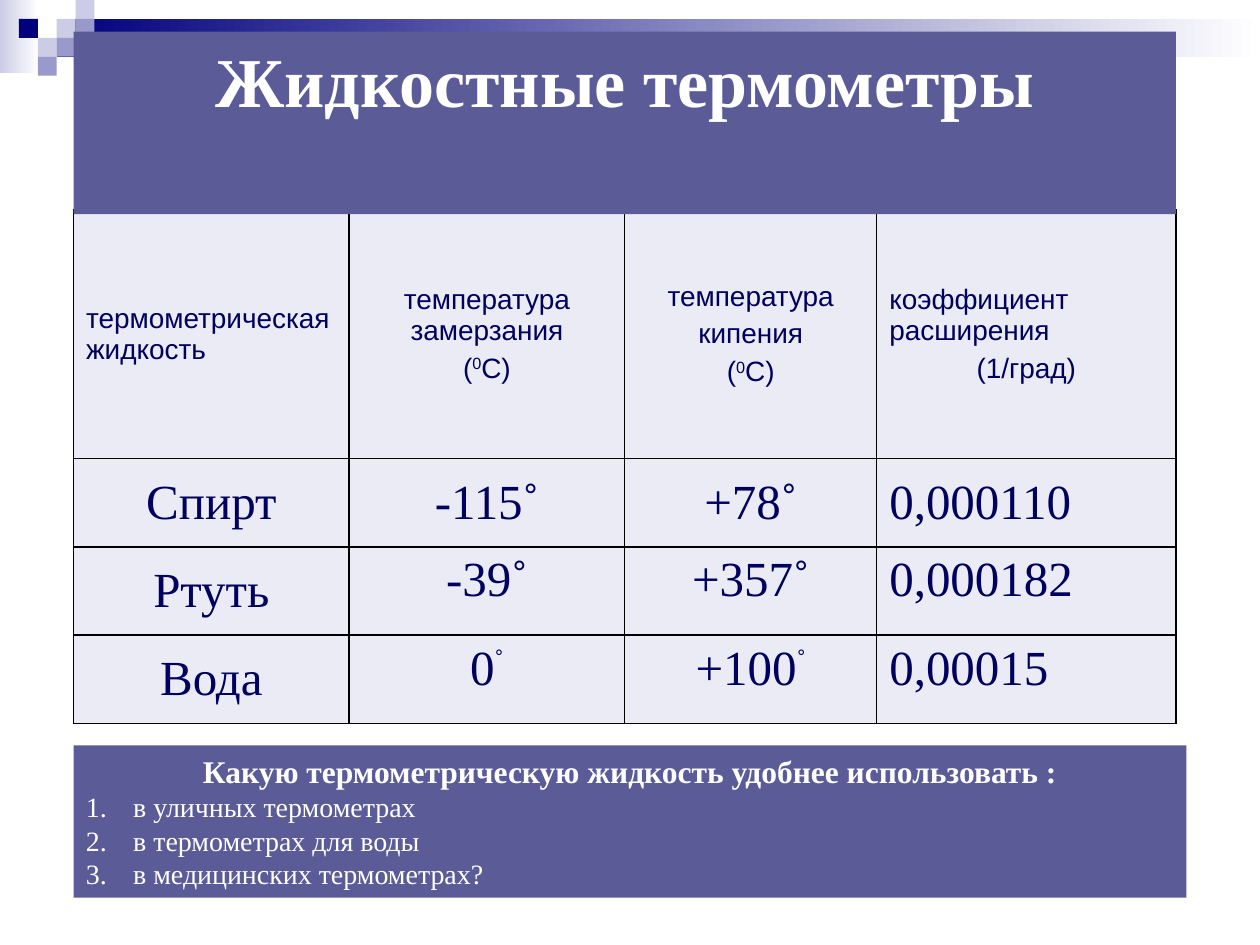
from lxml.etree import SubElement
from pptx import Presentation
from pptx.dml.color import RGBColor
from pptx.enum.shapes import MSO_SHAPE as SHAPE
from pptx.enum.text import MSO_ANCHOR as ANCHOR, PP_ALIGN as ALIGN
from pptx.oxml.ns import qn
from pptx.util import Pt

NAVY = RGBColor(0x00, 0x00, 0x7D)
INK = RGBColor(0x00, 0x00, 0x5E)
LILAC = RGBColor(0xCC, 0xCC, 0xE6)
VIOLET = RGBColor(0x99, 0x99, 0xCC)
PLUM = RGBColor(0x5B, 0x5B, 0x98)
PALE = RGBColor(0xEB, 0xEB, 0xF5)
WHITE = RGBColor(0xFF, 0xFF, 0xFF)
SANS, SERIF = "Arial", "Times New Roman"

TITLE = "Жидкостные термометры"
ASK = "Какую термометрическую жидкость удобнее использовать :"
CHOICES = ["в уличных термометрах", "в термометрах для воды",
           "в медицинских термометрах?"]

# Each cell is a list of paragraphs; text between ^ marks is superscript.
ROWS = [
    [["термометрическая жидкость"],
     ["температура замерзания", "(^0^С)"],
     ["температура", "кипения", "(^0^С)"],
     ["коэффициент расширения", "(1/град)"]],
    [["Спирт"], ["-115˚"], ["+78˚"], ["0,000110"]],
    [["Ртуть"], ["-39˚"], ["+357˚"], ["0,000182"]],
    [["Вода"], ["0^˚^"], ["+100^˚^"], ["0,00015"]],
]
LEFT = 42
WIDTHS = [157.5, 157.5, 144, 171]
HEIGHTS = [142, 50.5, 50.5, 50.5]

BANDS = [((0, 0, 22.3, 41.8), LILAC), ((32.4, 10.8, 687.6, 21.6), NAVY)]
STEP = 10.8
TILES = [(3, 1, LILAC), (4, 0, LILAC), (4, 1, VIOLET), (2, 2, LILAC),
         (1, 1, NAVY), (3, 2, VIOLET), (2, 3, VIOLET)]


def add_box(box, color, fade=False):
    """Add a plain rectangle, solid or fading to white on the right."""
    rect = slide.shapes.add_shape(SHAPE.RECTANGLE, *map(Pt, box))
    rect.shadow.inherit = False
    rect.line.fill.background()
    if fade:
        rect.fill.gradient()
        rect.fill.gradient_angle = 0
        for stop, tone in zip(rect.fill.gradient_stops, (color, WHITE)):
            stop.color.rgb = tone
    else:
        rect.fill.solid()
        rect.fill.fore_color.rgb = color
    frame = rect.text_frame
    frame.word_wrap = True
    frame.vertical_anchor = ANCHOR.TOP
    return frame


def write(para, text, size, font, color, align, bold=False):
    para.alignment = align
    for i, part in enumerate(text.split("^")):
        if part:
            run = para.add_run()
            run.text = part
            run.font.size, run.font.name = Pt(size), font
            run.font.bold, run.font.color.rgb = bold, color
            if i % 2:
                run.font._element.set("baseline", "30000")


def number(para):
    """Turn a paragraph into an item of a numbered list."""
    props = para._p.get_or_add_pPr()
    props.set("marL", str(Pt(27)))
    props.set("indent", str(-Pt(27)))
    SubElement(props, qn("a:buFont"), typeface="+mj-lt")
    SubElement(props, qn("a:buAutoNum"), type="arabicPeriod")


def rule(cell):
    """Draw the four black borders of a cell."""
    props = cell._tc.get_or_add_tcPr()
    for i, side in enumerate("LRTB"):
        line = SubElement(props, qn("a:ln" + side), w=str(Pt(1)))
        fill = SubElement(line, qn("a:solidFill"))
        SubElement(fill, qn("a:srgbClr"), val="000000")
        props.insert(i, line)


def fill_cell(cell, paras, row, col):
    size, font = (28, SERIF) if row else (16, SANS)
    cell.fill.solid()
    cell.fill.fore_color.rgb = PALE
    rule(cell)
    middle = row < 2 or col == 0
    cell.vertical_anchor = ANCHOR.MIDDLE if middle else ANCHOR.TOP
    frame = cell.text_frame
    for i, text in enumerate(paras):
        para = frame.add_paragraph() if i else frame.paragraphs[0]
        flush = i == 0 and (col == 3 or row == col == 0)
        align = ALIGN.LEFT if flush else ALIGN.CENTER
        write(para, text, size, font, INK, align)
        para.space_before = Pt(round(size * 0.23, 1))


deck = Presentation()
deck.slide_width, deck.slide_height = Pt(720), Pt(540)
slide = deck.slides.add_slide(deck.slide_layouts[6])

for box, color in BANDS:
    add_box(box, color, fade=True)
for col, row, color in TILES:
    add_box((col * STEP, row * STEP, STEP, STEP), color)

grid = slide.shapes.add_table(
    len(ROWS), len(WIDTHS), Pt(LEFT), Pt(120),
    Pt(sum(WIDTHS)), Pt(sum(HEIGHTS))).table
grid.first_row = grid.horz_banding = False
for column, width in zip(grid.columns, WIDTHS):
    column.width = Pt(width)
for r, (cells, height) in enumerate(zip(ROWS, HEIGHTS)):
    grid.rows[r].height = Pt(height)
    for c, paras in enumerate(cells):
        fill_cell(grid.cell(r, c), paras, r, c)

quiz = add_box((LEFT, 426, 636, 87), PLUM)
write(quiz.paragraphs[0], ASK, 18, SERIF, WHITE, ALIGN.CENTER, True)
for choice in CHOICES:
    item = quiz.add_paragraph()
    write(item, choice, 16, SERIF, WHITE, ALIGN.LEFT)
    number(item)

head = add_box((LEFT, 18, 630, 104.4), PLUM)
write(head.paragraphs[0], TITLE, 40, SERIF, WHITE, ALIGN.CENTER, True)

deck.save("out.pptx")
